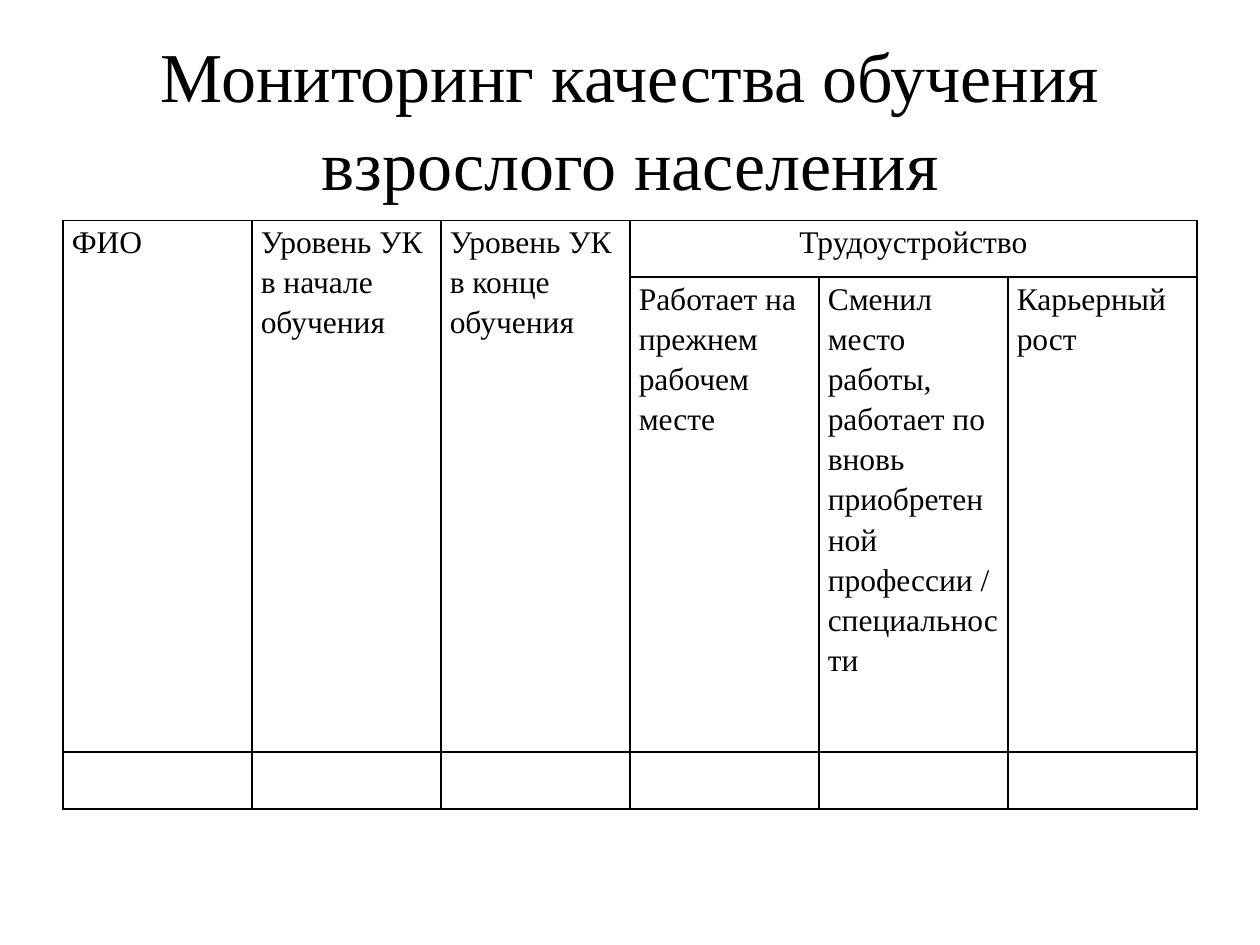
from lxml import etree
from pptx import Presentation
from pptx.dml.color import RGBColor
from pptx.enum import text
from pptx.oxml import ns
from pptx.util import Inches, Pt

FONT = "Times New Roman"
INK = "000000"
HEADINGS = {
    (0, 0): "ФИО",
    (0, 1): "Уровень УК в начале обучения",
    (0, 2): "Уровень УК в конце обучения",
    (0, 3): "Трудоустройство",
    (1, 3): "Работает на прежнем рабочем месте",
    (1, 4): "Сменил место работы, работает по вновь приобретенной профессии /специальности",
    (1, 5): "Карьерный рост",
}
ROW_HEIGHTS = (0.45, 3.77, 0.45)
COLUMNS, COLUMN_WIDTH = 6, 1.5


def color(value):
    return RGBColor.from_string(value)


def write(frame, words, size, spacing, align):
    frame.text = words
    para = frame.paragraphs[0]
    para.alignment = align
    para.line_spacing = spacing
    for font in [para.font] + [span.font for span in para.runs]:
        font.name = FONT
        font.size = Pt(size)
        font.color.rgb = color(INK)


def add_title(page, words):
    box = page.shapes.add_textbox(Inches(0.5), Inches(0.3), Inches(9), Inches(1.25))
    frame = box.text_frame
    frame.word_wrap = True
    frame.vertical_anchor = text.MSO_ANCHOR.MIDDLE
    write(frame, words, 40, 1.05, text.PP_ALIGN.CENTER)


def add_borders(cell):
    properties = cell._tc.get_or_add_tcPr()
    for position, side in enumerate(("lnL", "lnR", "lnT", "lnB")):
        line = etree.Element(ns.qn(f"a:{side}"), w=str(Pt(1)))
        fill = etree.SubElement(line, ns.qn("a:solidFill"))
        etree.SubElement(fill, ns.qn("a:srgbClr"), val=INK)
        properties.insert(position, line)


def style_cell(cell, words, align):
    cell.fill.background()
    cell.margin_left = cell.margin_right = Inches(0.07)
    cell.margin_top = cell.margin_bottom = 0
    write(cell.text_frame, words, 18, 1.15, align)
    add_borders(cell)


def add_monitoring_table(page):
    frame = page.shapes.add_table(
        len(ROW_HEIGHTS), COLUMNS, Inches(0.5), Inches(1.75),
        Inches(COLUMNS * COLUMN_WIDTH), Inches(sum(ROW_HEIGHTS)))
    table = frame.table
    table.first_row = table.horz_banding = False
    for column in table.columns:
        column.width = Inches(COLUMN_WIDTH)
    for row, height in enumerate(ROW_HEIGHTS):
        table.rows[row].height = Inches(height)
        for column in range(COLUMNS):
            centred = (row, column) == (0, 3)
            align = text.PP_ALIGN.CENTER if centred else text.PP_ALIGN.LEFT
            style_cell(table.cell(row, column), HEADINGS.get((row, column), ""), align)
    for column in range(3):
        table.cell(0, column).merge(table.cell(1, column))
    table.cell(0, 3).merge(table.cell(0, 5))


def main():
    deck = Presentation()
    deck.slide_width, deck.slide_height = Inches(10), Inches(7.5)
    page = deck.slides.add_slide(deck.slide_layouts[6])
    page.background.fill.solid()
    page.background.fill.fore_color.rgb = color("FFFFFF")
    add_title(page, "Мониторинг качества обучения взрослого населения")
    add_monitoring_table(page)
    deck.save("out.pptx")


if __name__ == "__main__":
    main()
